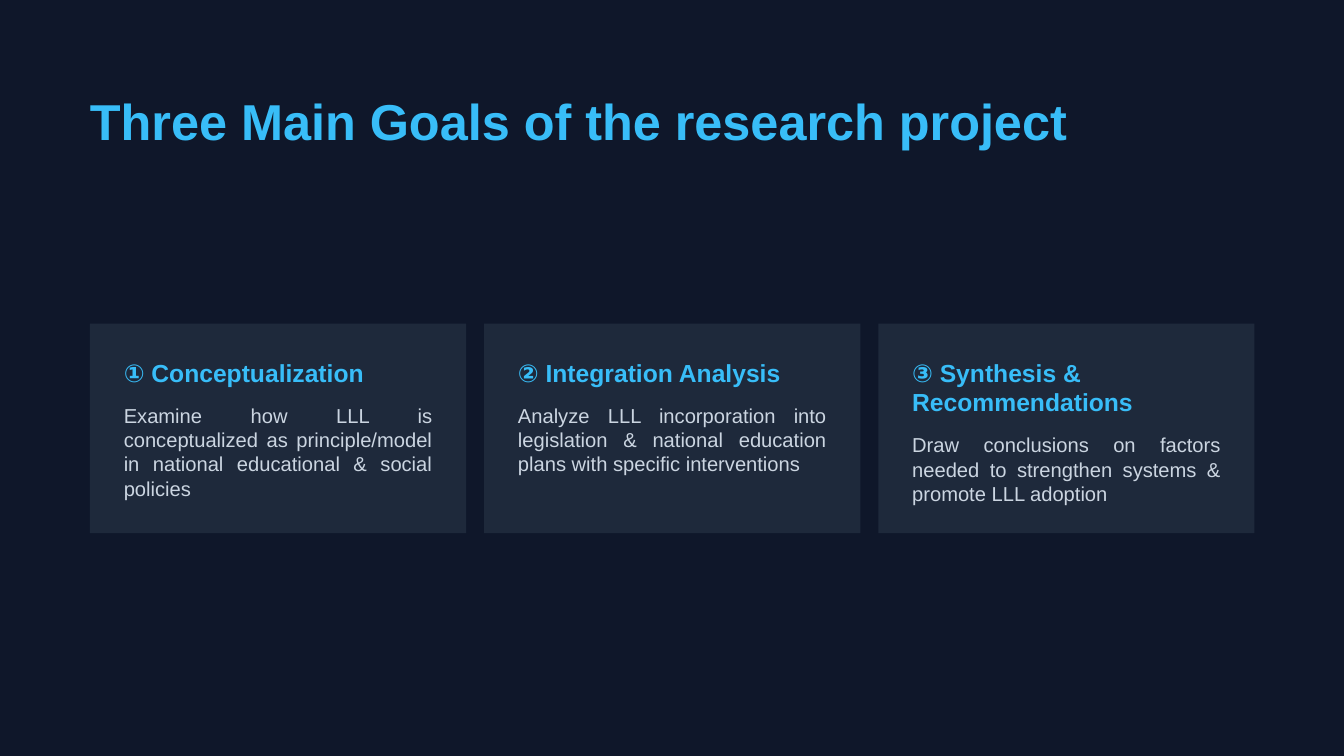
from dataclasses import dataclass

from pptx import Presentation
from pptx import util as u
from pptx.dml.color import RGBColor
from pptx.enum import shapes, text


@dataclass(frozen=True)
class Theme:
    font: str = "Arial"
    background: str = "0F172A"
    card: str = "1E293B"
    accent: str = "38BDF8"
    body: str = "CBD5E1"
    title_size: float = 27
    heading_size: float = 13.2
    body_size: float = 10.8
    title_leading: float = 32.4
    heading_leading: float = 15.8
    body_leading: float = 13


class SlideBuilder:
    def __init__(self, slide, theme):
        self.s = slide
        self.theme = theme

    def background(self):
        fill = self.s.background.fill
        fill.solid()
        fill.fore_color.rgb = RGBColor.from_string(self.theme.background)

    def set_text(self, sp, content, size, leading, color, bold=False,
                 align=text.PP_ALIGN.LEFT):
        tf = sp.text_frame
        tf.word_wrap = True
        tf.auto_size = text.MSO_AUTO_SIZE.NONE
        tf.vertical_anchor = text.MSO_ANCHOR.TOP
        tf.margin_left = tf.margin_right = 0
        tf.margin_top = tf.margin_bottom = 0
        p = tf.paragraphs[0]
        p.text = content
        p.alignment = align
        p.line_spacing = u.Pt(leading)
        p.font.name = self.theme.font
        p.font.size = u.Pt(size)
        p.font.bold = bold
        p.font.color.rgb = RGBColor.from_string(color)

    def title(self, content, left, top, width, height):
        t = self.theme
        sp = self.s.shapes.title
        sp.left, sp.top = u.Cm(left), u.Cm(top)
        sp.width, sp.height = u.Cm(width), u.Cm(height)
        self.set_text(sp, content, t.title_size, t.title_leading, t.accent, bold=True)

    def panel(self, left, top, width, height):
        sp = self.s.shapes.add_shape(
            shapes.MSO_SHAPE.RECTANGLE,
            u.Cm(left), u.Cm(top), u.Cm(width), u.Cm(height))
        sp.shadow.inherit = False
        sp.fill.solid()
        sp.fill.fore_color.rgb = RGBColor.from_string(self.theme.card)
        sp.line.fill.background()

    def textbox(self, left, top, width, height):
        return self.s.shapes.add_textbox(
            u.Cm(left), u.Cm(top), u.Cm(width), u.Cm(height))

    def heading(self, content, *box):
        t = self.theme
        self.set_text(self.textbox(*box), content, t.heading_size,
                      t.heading_leading, t.accent, bold=True)

    def body(self, content, *box):
        t = self.theme
        self.set_text(self.textbox(*box), content, t.body_size,
                      t.body_leading, t.body, align=text.PP_ALIGN.JUSTIFY)


GOALS = [
    ("① Conceptualization", 0.66,
     "Examine how LLL is conceptualized as principle/model in national "
     "educational & social policies", 1.7),
    ("② Integration Analysis", 0.66,
     "Analyze LLL incorporation into legislation & national education plans "
     "with specific interventions", 1.27),
    ("③ Synthesis & Recommendations", 1.22,
     "Draw conclusions on factors needed to strengthen systems & promote "
     "LLL adoption", 1.27),
]
MARGIN = 1.7
CARD_TOP, CARD_WIDTH, CARD_HEIGHT = 6.12, 7.11, 3.96
CARD_GAP = 0.34
PADDING = 0.64
TEXT_GAP = 0.2


def main():
    prs = Presentation()
    prs.slide_width, prs.slide_height = u.Cm(25.4), u.Cm(14.29)
    slide = SlideBuilder(prs.slides.add_slide(prs.slide_layouts[5]), Theme())
    slide.background()
    slide.title("Three Main Goals of the research project",
                MARGIN, MARGIN, 22.45, 1.12)

    text_top = CARD_TOP + PADDING
    text_width = CARD_WIDTH - 2 * PADDING
    for i, (heading, heading_height, body, body_height) in enumerate(GOALS):
        left = MARGIN + i * (CARD_WIDTH + CARD_GAP)
        text_left = left + PADDING
        body_top = text_top + heading_height + TEXT_GAP
        slide.panel(left, CARD_TOP, CARD_WIDTH, CARD_HEIGHT)
        slide.heading(heading, text_left, text_top, text_width, heading_height)
        slide.body(body, text_left, body_top, text_width, body_height)

    prs.save("out.pptx")


if __name__ == "__main__":
    main()
